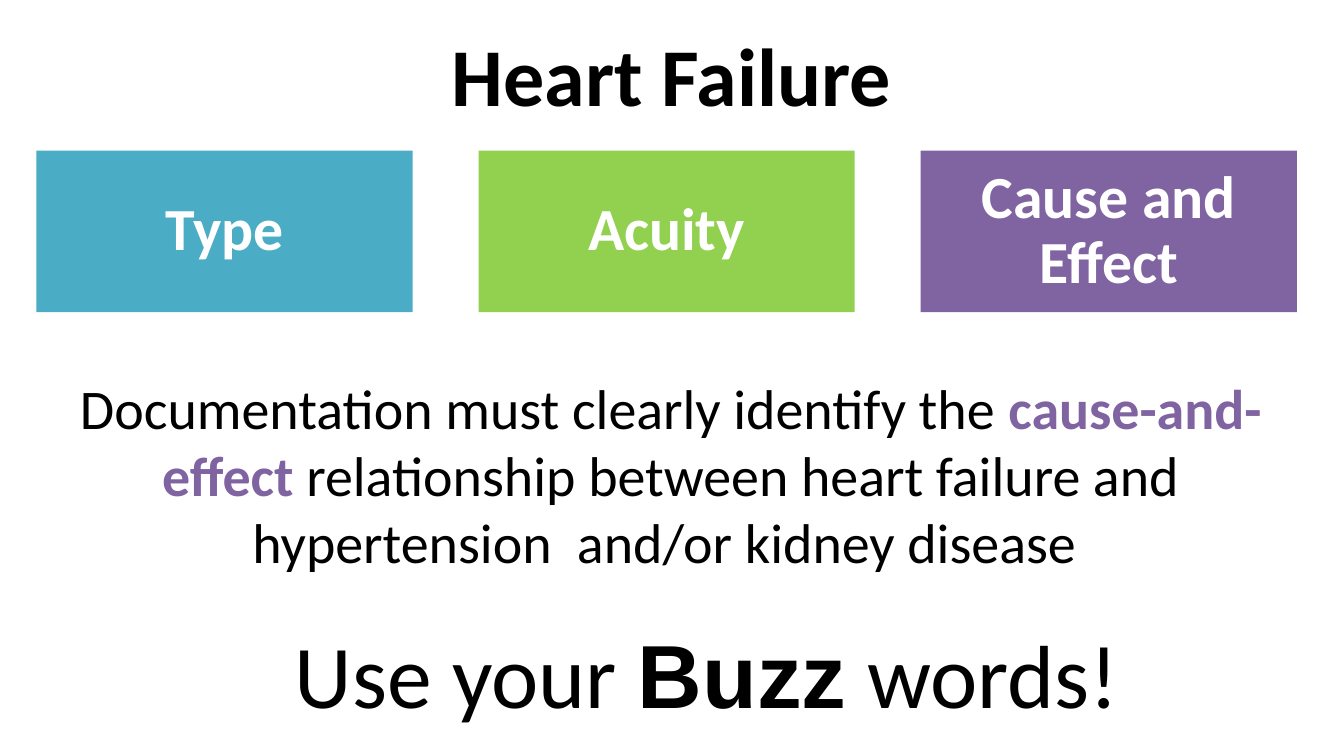
from pptx import Presentation
from pptx.dml.color import RGBColor
from pptx.enum.shapes import MSO_SHAPE as Shape
from pptx.enum.text import MSO_ANCHOR as Anchor, PP_ALIGN as Align
from pptx.util import Cm, Pt

BLACK, WHITE, PURPLE = "000000", "FFFFFF", "8064A2"
TILES = [("Type", "4BACC6"), ("Acuity", "92D050"), ("Cause and Effect", PURPLE)]


def paint(target, color):
    """Set a font or solid fill to a hex colour."""
    color_of = getattr(target, "fore_color", None) or target.color
    color_of.rgb = RGBColor.from_string(color)


def style(para, size, color, bold=None):
    """Centre a paragraph and set its font."""
    para.alignment = Align.CENTER
    font = para.font
    font.name, font.size, font.bold = "Calibri", Pt(size), bold
    paint(font, color)


def add_text(slide, box, size, parts, bold=None, anchor=Anchor.TOP):
    """Place one wrapped paragraph and return its runs."""
    frame = slide.shapes.add_textbox(*map(Cm, box)).text_frame
    frame.word_wrap = True
    frame.vertical_anchor = anchor
    para = frame.paragraphs[0]
    style(para, size, BLACK, bold)
    for part in parts:
        para.add_run().text = part
    return para.runs


def add_title(slide, box):
    """Place the heading."""
    add_text(slide, box, 44, ["Heart Failure"], True, Anchor.MIDDLE)


def add_tiles(slide, box):
    """Spread the equal tiles evenly across the box."""
    left, top, width, height = box
    wide = 7.11
    step = (width - wide) / (len(TILES) - 1)
    for i, (label, color) in enumerate(TILES):
        tile = slide.shapes.add_shape(
            Shape.RECTANGLE, Cm(left + i * step), Cm(top), Cm(wide), Cm(height))
        tile.shadow.inherit = False
        tile.fill.solid()
        paint(tile.fill, color)
        tile.line.fill.background()
        frame = tile.text_frame
        frame.word_wrap = True
        frame.vertical_anchor = Anchor.MIDDLE
        frame.margin_left = frame.margin_right = Cm(0.4)
        frame.margin_top = frame.margin_bottom = Cm(0.23)
        frame.text = label
        para = frame.paragraphs[0]
        para.line_spacing = 0.9
        style(para, 32, WHITE, True)


def add_rule(slide, box):
    """Place the documentation rule with its key term in purple."""
    runs = add_text(slide, box, 30, [
        "Documentation must clearly identify the ",
        "cause-and-effect",
        " relationship between heart failure and hypertension  and/or kidney disease "])
    runs[1].font.bold = True
    paint(runs[1].font, PURPLE)


def add_slogan(slide, box):
    """Place the closing slogan with its bold word."""
    buzz = add_text(slide, box, 48, ["Use your ", "Buzz", " words!"])[1].font
    buzz.name, buzz.bold = "Arial", True


def main():
    """Build and save the slide."""
    deck = Presentation()
    deck.slide_width, deck.slide_height = Cm(25.4), Cm(14.29)
    slide = deck.slides.add_slide(deck.slide_layouts[6])
    add_slogan(slide, (1.32, 11.58, 24.08, 2.31))
    add_rule(slide, (0.64, 6.93, 24.08, 4.11))
    add_tiles(slide, (0.69, 2.85, 23.82, 3.05))
    add_title(slide, (0, 0.2, 25.4, 2.39))
    deck.save("out.pptx")


if __name__ == "__main__":
    main()
